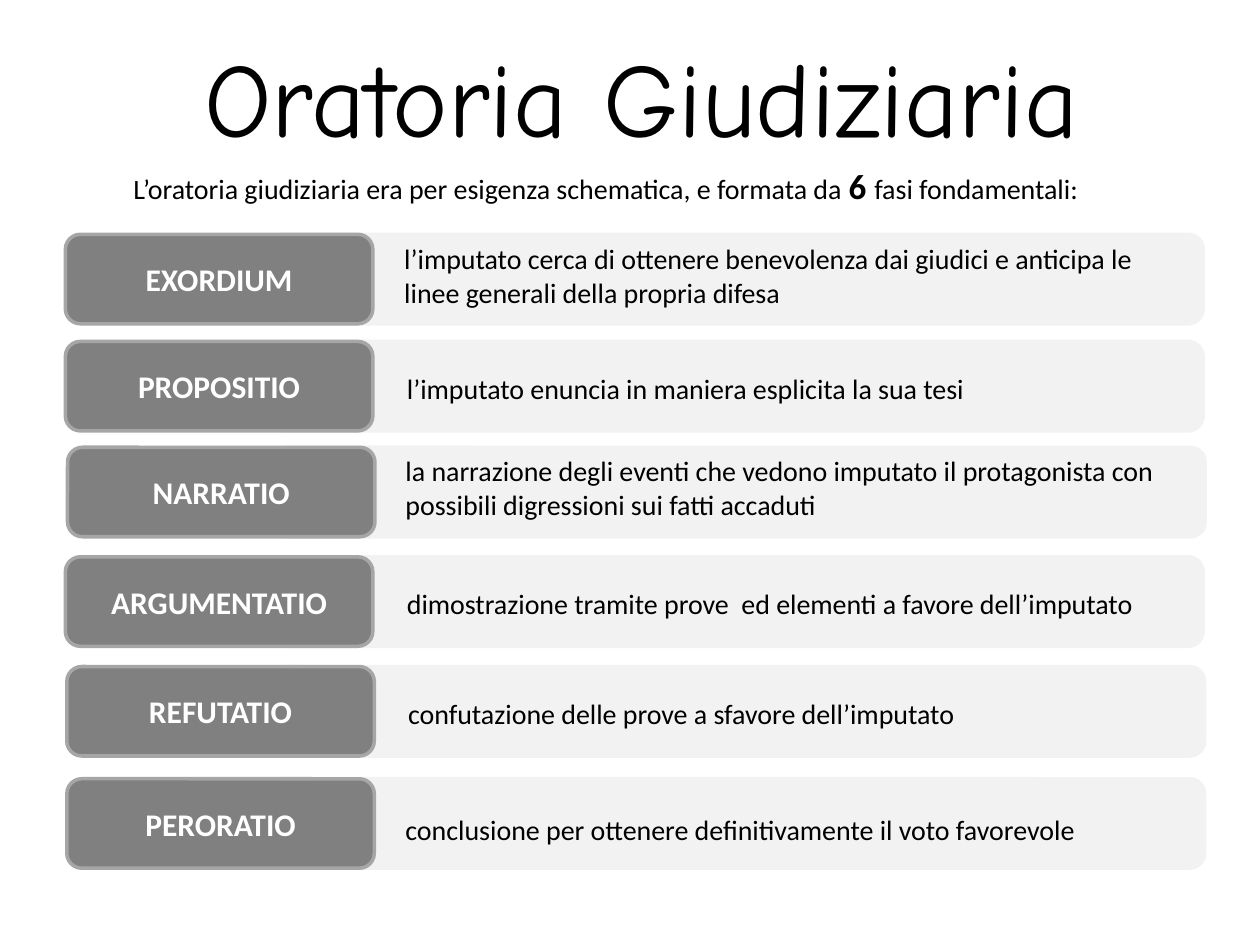
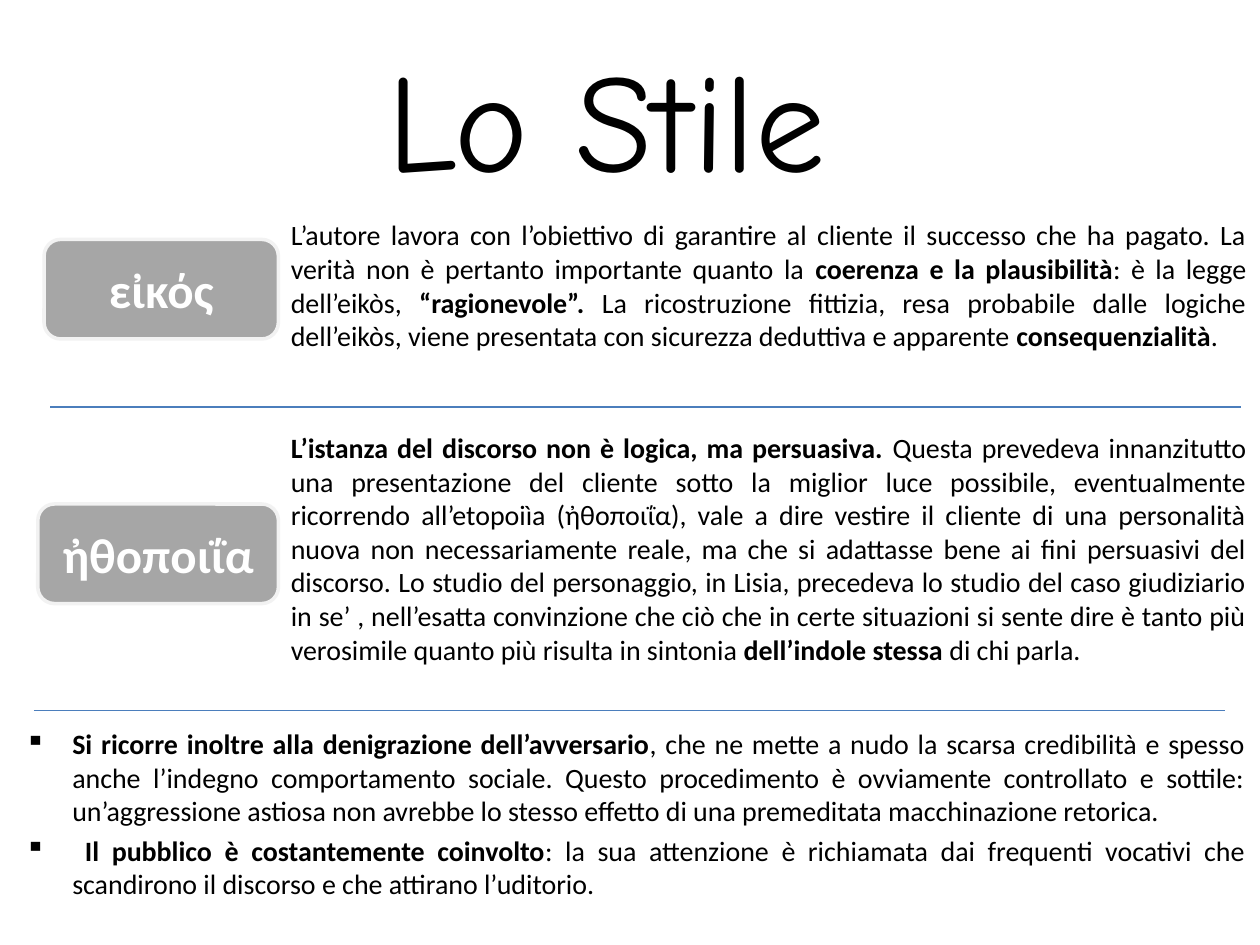
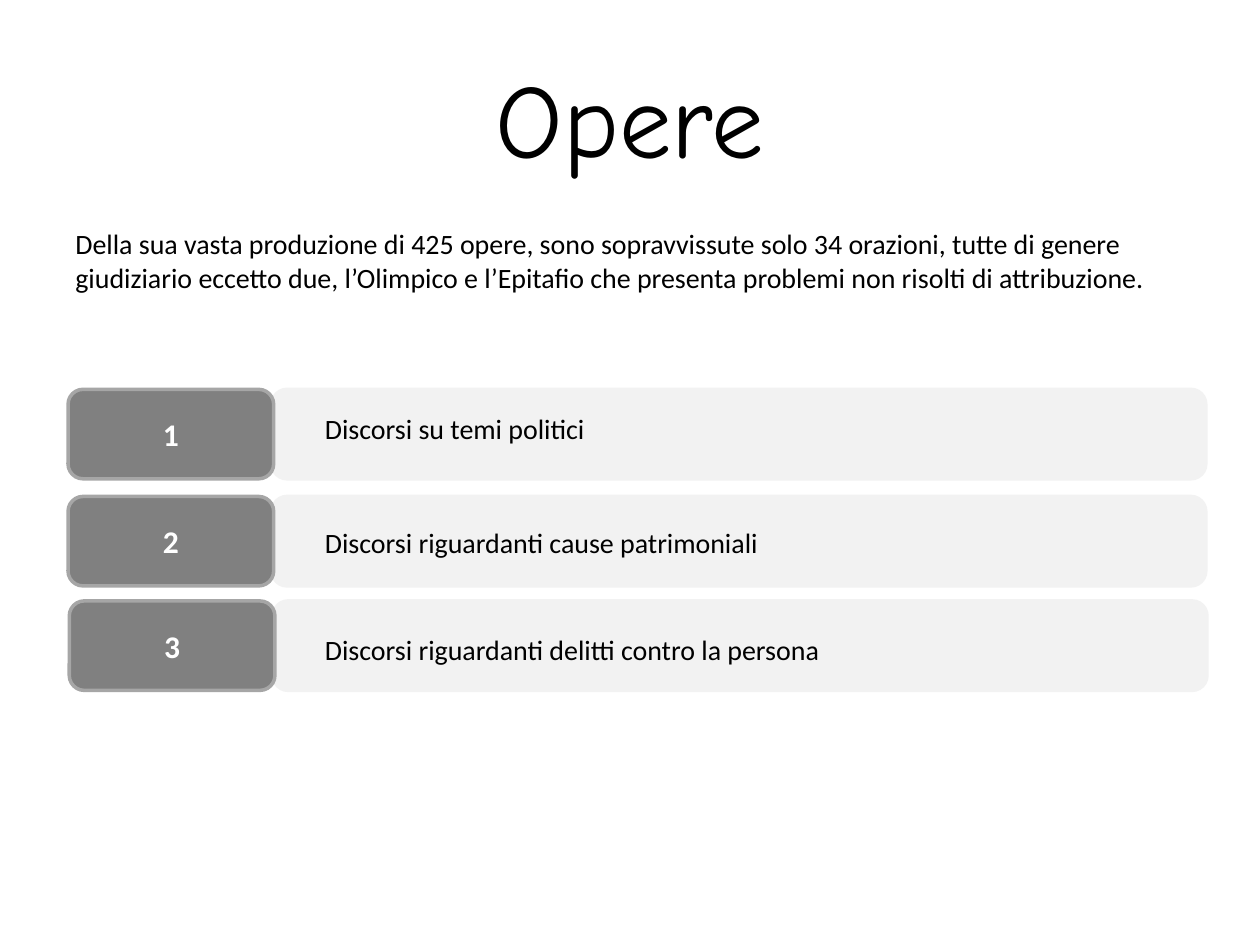
from lxml.etree import SubElement
from pptx import Presentation
from pptx.dml.color import RGBColor
from pptx.enum.shapes import MSO_CONNECTOR, MSO_SHAPE
from pptx.enum.text import MSO_ANCHOR, MSO_AUTO_SIZE, PP_ALIGN
from pptx.oxml.ns import qn
from pptx.util import Pt

COLORS = {
    "text": "000000",
    "label_text": "FFFFFF",
    "label": "808080",
    "label_border": "A6A6A6",
    "term": "A6A6A6",
    "band": "F2F2F2",
    "rule": "4B7EBC",
}
TITLE_FONT = "Comic Neue"
BODY_FONT = "Calibri"
BODY_SIZE = 16
PARAGRAPH_GAP = 3.2
HANGING_INDENT = 27
BORDER = 2

BAND_WIDTH = 533.5
BAND_OFFSET = 116.6
ROW_HEIGHT = 51.1
LINE_HEIGHT = 26.6

PHASES_TITLE = "Oratoria Giudiziaria"
PHASES_INTRO = "L’oratoria giudiziaria era per esigenza schematica, e formata da *6 *fasi fondamentali:"
PHASES_LABEL_WIDTH = 175.7
PHASES_TEXT_WIDTH = 464.4
PHASES = [
    ("EXORDIUM", "l’imputato cerca di ottenere benevolenza dai giudici e anticipa le linee generali della propria difesa", (37.4, 133.9), (223.9, 134.6)),
    ("PROPOSITIO", "l’imputato enuncia in maniera esplicita la sua tesi", (37.4, 195.1), (225.4, 208.8)),
    ("NARRATIO", "la narrazione degli eventi che vedono imputato il protagonista con possibili digressioni sui fatti accaduti", (38.6, 255.6), (224.6, 255.6)),
    ("ARGUMENTATIO", "dimostrazione tramite prove  ed elementi a favore dell’imputato", (37.4, 318.2), (225.4, 331.5)),
    ("REFUTATIO", "confutazione delle prove a sfavore dell’imputato", (38.2, 380.9), (226.1, 394.6)),
    ("PERORATIO", "conclusione per ottenere definitivamente il voto favorevole", (38.2, 445), (224.6, 460.8)),
]

STYLE_TITLE = "Lo Stile "
STYLE_TEXT_LEFT = 159.1
STYLE_TEXT_WIDTH = 560.2
TERM_HEIGHT = 56.9
TERM_RIGHT = 159.1
RULE_WIDTH = 680.4
TERMS = [
    {
        "name": "εἰκός",
        "origin": (25.2, 136.8),
        "text": "L’autore lavora con l’obiettivo di garantire al cliente il successo che ha pagato. La verità non è pertanto importante quanto la *coerenza e la plausibilità*: è la legge dell’eikòs, *“ragionevole”. *La ricostruzione fittizia, resa probabile dalle logiche dell’eikòs, viene presentata con sicurezza deduttiva e apparente *consequenzialità*.",
        "text_top": 121,
        "text_height": 90.7,
        "rule": (28.8, 232.5),
    },
    {
        "name": "ἠθοποιΐα",
        "origin": (21.6, 288),
        "text": "*L’istanza del discorso non è logica, ma persuasiva. *Questa prevedeva innanzitutto una presentazione del cliente sotto la miglior luce possibile, eventualmente ricorrendo all’etopoiìa (ἠθοποιΐα), vale a dire vestire il cliente di una personalità nuova non necessariamente reale, ma che si adattasse bene ai fini persuasivi del discorso. Lo studio del personaggio, in Lisia, precedeva lo studio del caso giudiziario in se’ , nell’esatta convinzione che ciò che in certe situazioni si sente dire è tanto più verosimile quanto più risulta in sintonia *dell’indole stessa *di chi parla.",
        "text_top": 242.6,
        "text_height": 161.3,
        "rule": (19.4, 406.1),
    },
]
STYLE_BULLETS = [
    "*Si ricorre inoltre alla denigrazione dell’avversario*, che ne mette a nudo la scarsa credibilità e spesso anche l’indegno comportamento sociale. Questo procedimento è ovviamente controllato e sottile: un’aggressione astiosa non avrebbe lo stesso effetto di una premeditata macchinazione retorica.",
    " *Il pubblico è costantemente coinvolto*: la sua attenzione è richiamata dai frequenti vocativi che scandirono il discorso e che attirano l’uditorio.",
]

WORKS_TITLE = "Opere"
WORKS_INTRO = "Della sua vasta produzione di 425 opere, sono sopravvissute solo 34 orazioni, tutte di genere giudiziario eccetto due, l’Olimpico e l’Epitafio che presenta problemi non risolti di attribuzione."
WORKS_LABEL_WIDTH = 117.5
WORKS_TEXT_WIDTH = 510
WORKS = [
    ("1", "Discorsi su temi politici", (38.9, 222.5), (178.6, 231.8)),
    ("2", "Discorsi riguardanti cause patrimoniali", (38.9, 283.7), (178.6, 296.6)),
    ("3", "Discorsi riguardanti delitti contro la persona", (39.6, 343.4), (178.6, 357.8)),
]


def color(name):
    return RGBColor.from_string(COLORS[name])


def format_run(run, size, font, color_name, bold=False):
    run.font.size = Pt(size)
    run.font.name = font
    run.font.bold = bold
    run.font.color.rgb = color(color_name)


def add_bullet(paragraph):
    properties = paragraph._p.get_or_add_pPr()
    properties.set("marL", str(Pt(HANGING_INDENT)))
    properties.set("indent", str(Pt(-HANGING_INDENT)))
    SubElement(properties, qn("a:buChar")).set("char", "▪")


def add_text(shapes, box, texts, justify=False, bullets=False, strong_size=BODY_SIZE, grow=False):
    shape = shapes.add_textbox(*map(Pt, box))
    frame = shape.text_frame
    frame.word_wrap = True
    if grow:
        frame.auto_size = MSO_AUTO_SIZE.SHAPE_TO_FIT_TEXT
    for index, text in enumerate(texts):
        paragraph = frame.add_paragraph() if index else frame.paragraphs[0]
        if bullets:
            add_bullet(paragraph)
        if justify:
            paragraph.alignment = PP_ALIGN.JUSTIFY
        if index:
            paragraph.space_before = Pt(PARAGRAPH_GAP)
        for position, part in enumerate(text.split("*")):
            if part:
                strong = position % 2 == 1
                run = paragraph.add_run()
                run.text = part
                format_run(run, strong_size if strong else BODY_SIZE, BODY_FONT, "text", strong)


def center_text(shape, text, size, font, color_name, bold=False):
    frame = shape.text_frame
    frame.word_wrap = True
    frame.vertical_anchor = MSO_ANCHOR.MIDDLE
    frame.text = text
    paragraph = frame.paragraphs[0]
    paragraph.alignment = PP_ALIGN.CENTER
    format_run(paragraph.runs[0], size, font, color_name, bold)


def add_title(slide, text, size=60, origin=(36, 21.6)):
    shape = slide.shapes.add_textbox(*map(Pt, (*origin, 648, 90)))
    center_text(shape, text, size, TITLE_FONT, "text")


def add_rounded(shapes, box, fill, border):
    shape = shapes.add_shape(MSO_SHAPE.ROUNDED_RECTANGLE, *map(Pt, box))
    shape.shadow.inherit = False
    shape.fill.solid()
    shape.fill.fore_color.rgb = color(fill)
    shape.line.color.rgb = color(border)
    shape.line.width = Pt(BORDER)
    return shape


def add_rows(slide, rows, label_width, text_width):
    for name, text, (left, top), text_origin in rows:
        shapes = slide.shapes.add_group_shape().shapes
        add_rounded(shapes, (left + BAND_OFFSET, top, BAND_WIDTH, ROW_HEIGHT), "band", "band")
        label = add_rounded(shapes, (left, top, label_width, ROW_HEIGHT), "label", "label_border")
        center_text(label, name, 18, BODY_FONT, "label_text", True)
        add_text(shapes, (*text_origin, text_width, LINE_HEIGHT), [text], grow=True)


def add_rule(slide, left, top):
    rule = slide.shapes.add_connector(
        MSO_CONNECTOR.STRAIGHT, Pt(left), Pt(top), Pt(left + RULE_WIDTH), Pt(top)
    )
    rule.line.color.rgb = color("rule")
    rule.line.width = Pt(0.75)
    SubElement(rule._element.spPr, qn("a:effectLst"))


def build_phases(slide):
    add_title(slide, PHASES_TITLE, origin=(42.5, 9.4))
    add_text(slide.shapes, (69.1, 90.7, 650.9, 32), [PHASES_INTRO], strong_size=20, grow=True)
    add_rows(slide, PHASES, PHASES_LABEL_WIDTH, PHASES_TEXT_WIDTH)


def build_style(slide):
    add_text(slide.shapes, (7.2, 411.8, 711.4, 120), STYLE_BULLETS, justify=True, bullets=True)
    add_title(slide, STYLE_TITLE, size=80)
    for term in TERMS:
        left, top = term["origin"]
        label = add_rounded(slide.shapes, (left, top, TERM_RIGHT - left, TERM_HEIGHT), "term", "band")
        center_text(label, term["name"], 28, BODY_FONT, "label_text", True)
        box = (STYLE_TEXT_LEFT, term["text_top"], STYLE_TEXT_WIDTH, term["text_height"])
        add_text(slide.shapes, box, [term["text"]], justify=True)
        add_rule(slide, *term["rule"])


def build_works(slide):
    add_title(slide, WORKS_TITLE)
    add_text(slide.shapes, (36, 126, 648, 60), [WORKS_INTRO])
    add_rows(slide, WORKS, WORKS_LABEL_WIDTH, WORKS_TEXT_WIDTH)


def main():
    presentation = Presentation()
    presentation.slide_width = Pt(720)
    presentation.slide_height = Pt(540)
    for build in (build_phases, build_style, build_works):
        build(presentation.slides.add_slide(presentation.slide_layouts[6]))
    presentation.save("out.pptx")


if __name__ == "__main__":
    main()
